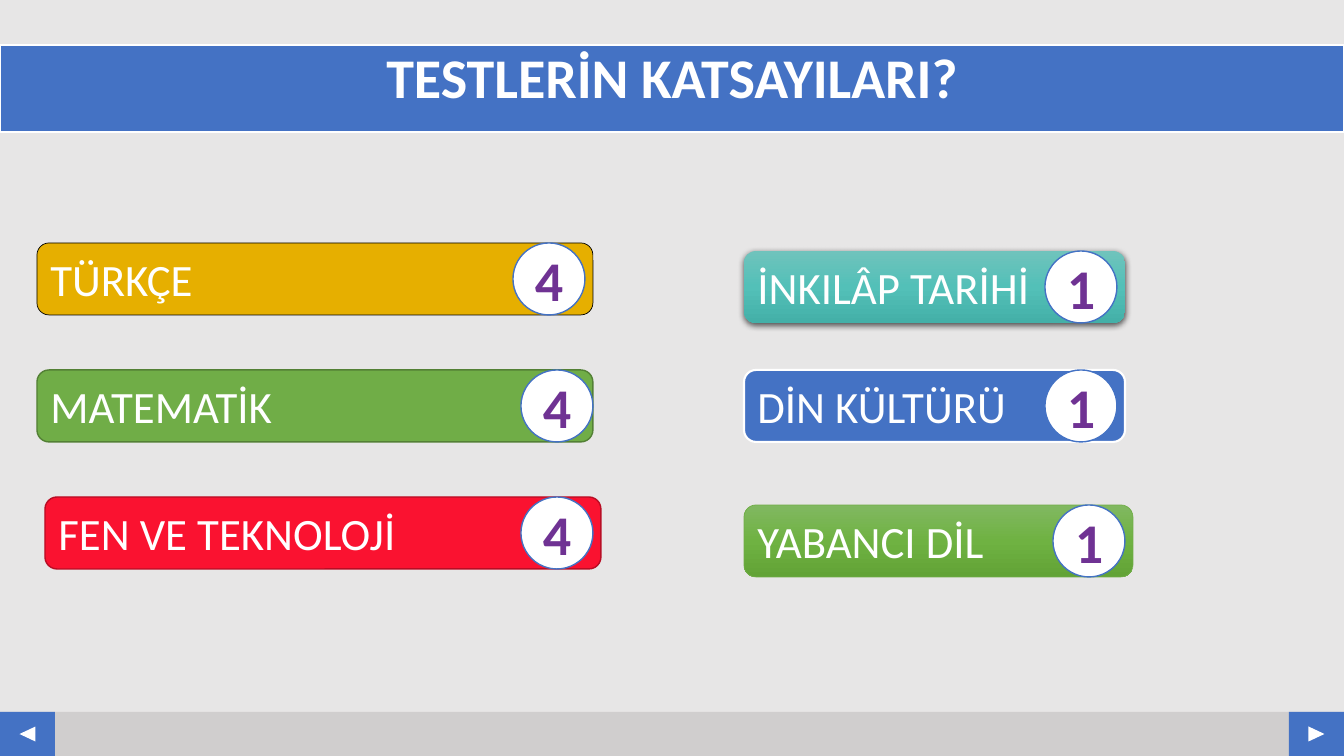
from dataclasses import dataclass
from typing import Optional

from lxml import etree
from copy import deepcopy
from pptx import Presentation
from pptx.dml.color import RGBColor
from pptx.enum.shapes import MSO_SHAPE
from pptx.enum.text import MSO_ANCHOR, PP_ALIGN
from pptx.oxml.ns import qn
from pptx.util import Pt

RECTANGLE = MSO_SHAPE.RECTANGLE
TRIANGLE = MSO_SHAPE.ISOSCELES_TRIANGLE
PILL = MSO_SHAPE.FLOWCHART_ALTERNATE_PROCESS
OVAL = MSO_SHAPE.OVAL
LEFT, CENTER = PP_ALIGN.LEFT, PP_ALIGN.CENTER
TOP, MIDDLE = MSO_ANCHOR.TOP, MSO_ANCHOR.MIDDLE

FONT = "Calibri"
WHITE = RGBColor(0xFF, 0xFF, 0xFF)
BLACK = RGBColor(0x00, 0x00, 0x00)
BACKGROUND = RGBColor(0xE7, 0xE6, 0xE6)
GREY = RGBColor(0xD0, 0xCE, 0xCE)
BLUE = RGBColor(0x44, 0x72, 0xC4)
PURPLE = RGBColor(0x6F, 0x32, 0x93)
AMBER = RGBColor(0xE6, 0xAF, 0x00)
GREEN = RGBColor(0x70, 0xAD, 0x47)
DARK_GREEN = RGBColor(0x53, 0x80, 0x35)
RED = RGBColor(0xFA, 0x12, 0x30)
DARK_RED = RGBColor(0xB9, 0x0D, 0x24)
TEAL_FADE = (RGBColor(0x6F, 0xC3, 0xBC), RGBColor(0x53, 0xC0, 0xB8), RGBColor(0x44, 0xB0, 0xA8))
GREEN_FADE = (RGBColor(0x81, 0xB8, 0x61), RGBColor(0x6F, 0xB2, 0x42), RGBColor(0x62, 0xA3, 0x36))

# Sizes in px
PAGE_WIDTH, PAGE_HEIGHT = 1344, 756
EMU_PER_PX = 12192000 / PAGE_WIDTH
BAR_TOP, BAR_HEIGHT, BUTTON_WIDTH = 712, 44, 55
ARROW_WIDTH, ARROW_HEIGHT = 15, 16
PILL_HEIGHT = 72


@dataclass(frozen=True)
class Subject:
    name: str
    weight: str
    left: int
    top: int
    width: int
    badge_left: int
    fill: RGBColor | tuple
    line: Optional[RGBColor] = None
    line_width: float = 1
    shadow: bool = False


SUBJECTS = (
    Subject("TÜRKÇE", "4", 37, 243, 556, 513, AMBER, BLACK, 0.5),
    Subject("MATEMATİK", "4", 37, 370, 556, 521, GREEN, DARK_GREEN),
    Subject("FEN VE TEKNOLOJİ", "4", 45, 497, 556, 521, RED, DARK_RED),
    Subject("İNKILÂP TARİHİ", "1", 744, 251, 381, 1045, TEAL_FADE, shadow=True),
    Subject("DİN KÜLTÜRÜ", "1", 744, 370, 381, 1045, BLUE, WHITE, 1.5),
    Subject("YABANCI DİL", "1", 744, 505, 389, 1053, GREEN_FADE, GREEN, 0.5),
)


def px(length: int) -> int:
    return round(length * EMU_PER_PX)


def fill_gradient(shape, colors: tuple) -> None:
    """Fade evenly from the top of the shape to its bottom."""
    shape.fill.gradient()
    shape.fill.gradient_angle = 270
    stop_list = shape._element.spPr.find(qn("a:gradFill")).find(qn("a:gsLst"))
    while len(stop_list) < len(colors):
        stop_list.append(deepcopy(stop_list[-1]))
    for index, (stop, color) in enumerate(zip(shape.fill.gradient_stops, colors)):
        stop.position = index / (len(colors) - 1)
        stop.color.rgb = color


def add_shadow(shape) -> None:
    effects = shape._element.spPr.find(qn("a:effectLst"))
    shadow = etree.SubElement(effects, qn("a:outerShdw"), blurRad=str(Pt(4.5)),
                              dist=str(Pt(1.5)), dir="5400000", algn="ctr", rotWithShape="0")
    color = etree.SubElement(shadow, qn("a:srgbClr"), val=str(BLACK))
    etree.SubElement(color, qn("a:alpha"), val="63000")


def add_box(page, kind, left: int, top: int, width: int, height: int, fill,
            line: Optional[RGBColor] = None, line_width: float = 1, rotation: int = 0):
    box = page.shapes.add_shape(kind, px(left), px(top), px(width), px(height))
    box.shadow.inherit = False
    box.rotation = rotation
    if isinstance(fill, RGBColor):
        box.fill.solid()
        box.fill.fore_color.rgb = fill
    else:
        fill_gradient(box, fill)
    if line is None:
        box.line.fill.background()
    else:
        box.line.color.rgb = line
        box.line.width = Pt(line_width)
    return box


def write(box, text: str, *, size: int, color: RGBColor = WHITE, bold: bool = False,
          align=LEFT, anchor=MIDDLE, spacing: float = 1.0) -> None:
    frame = box.text_frame
    frame.word_wrap = True
    frame.vertical_anchor = anchor
    para = frame.paragraphs[0]
    para.alignment = align
    para.line_spacing = spacing
    span = para.add_run()
    span.text = text
    span.font.name = FONT
    span.font.size = Pt(size)
    span.font.bold = bold
    span.font.color.rgb = color


def add_navigation(page) -> None:
    add_box(page, RECTANGLE, 0, BAR_TOP, PAGE_WIDTH, BAR_HEIGHT, GREY)
    for left, rotation in ((0, 270), (PAGE_WIDTH - BUTTON_WIDTH, 90)):
        add_box(page, RECTANGLE, left, BAR_TOP, BUTTON_WIDTH, BAR_HEIGHT, BLUE)
        add_box(page, TRIANGLE, left + (BUTTON_WIDTH - ARROW_WIDTH) // 2,
                BAR_TOP + (BAR_HEIGHT - ARROW_HEIGHT) // 2,
                ARROW_WIDTH, ARROW_HEIGHT, WHITE, rotation=rotation)


def add_subject(page, subject: Subject) -> None:
    pill = add_box(page, PILL, subject.left, subject.top, subject.width, PILL_HEIGHT,
                   subject.fill, subject.line, subject.line_width)
    if subject.shadow:
        add_shadow(pill)
    write(pill, subject.name, size=32)
    badge = add_box(page, OVAL, subject.badge_left, subject.top, PILL_HEIGHT, PILL_HEIGHT,
                    WHITE, BLUE)
    write(badge, subject.weight, size=40, color=PURPLE, bold=True, align=CENTER)


def main() -> None:
    deck = Presentation()
    deck.slide_width, deck.slide_height = px(PAGE_WIDTH), px(PAGE_HEIGHT)
    page = deck.slides.add_slide(deck.slide_layouts[6])
    page.background.fill.solid()
    page.background.fill.fore_color.rgb = BACKGROUND

    # Footer bar with its two arrow buttons
    add_navigation(page)

    # Title band
    title = add_box(page, RECTANGLE, 0, 45, PAGE_WIDTH, 87, BLUE, WHITE, 1.5)
    write(title, "TESTLERİN KATSAYILARI?", size=40, bold=True, align=CENTER,
          anchor=TOP, spacing=0.9)

    # Subjects with their weights
    for subject in SUBJECTS:
        add_subject(page, subject)

    deck.save("out.pptx")


if __name__ == "__main__":
    main()
